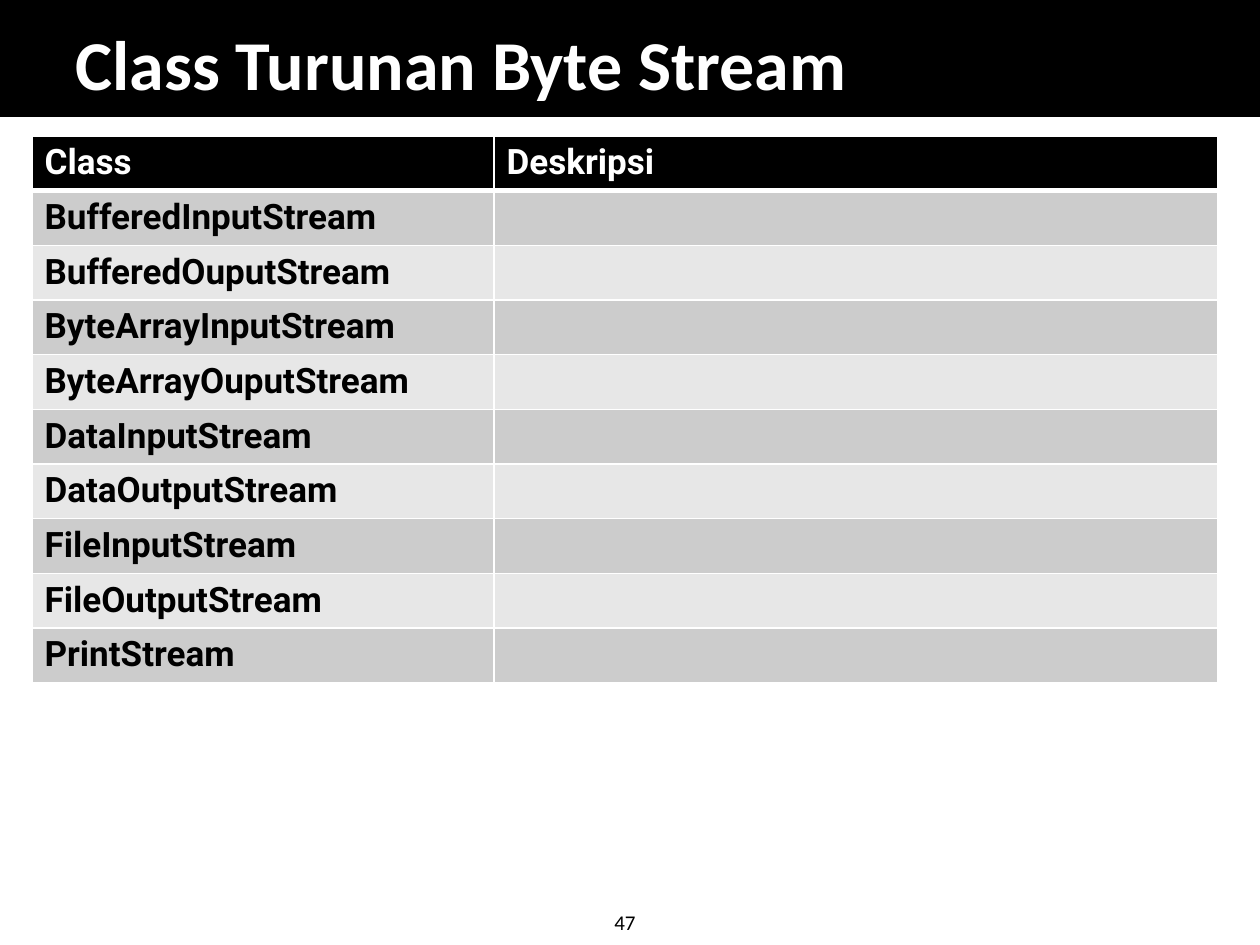
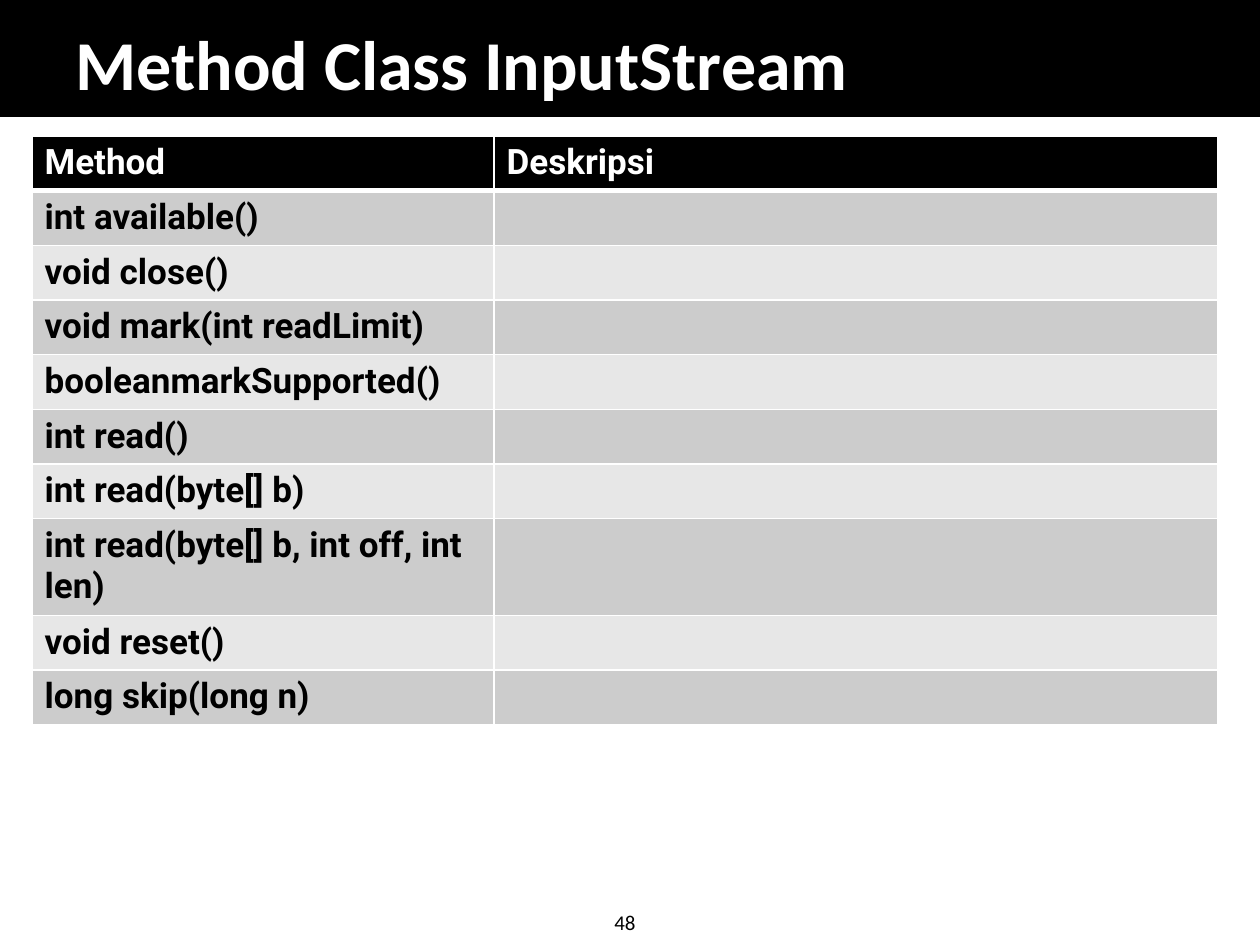
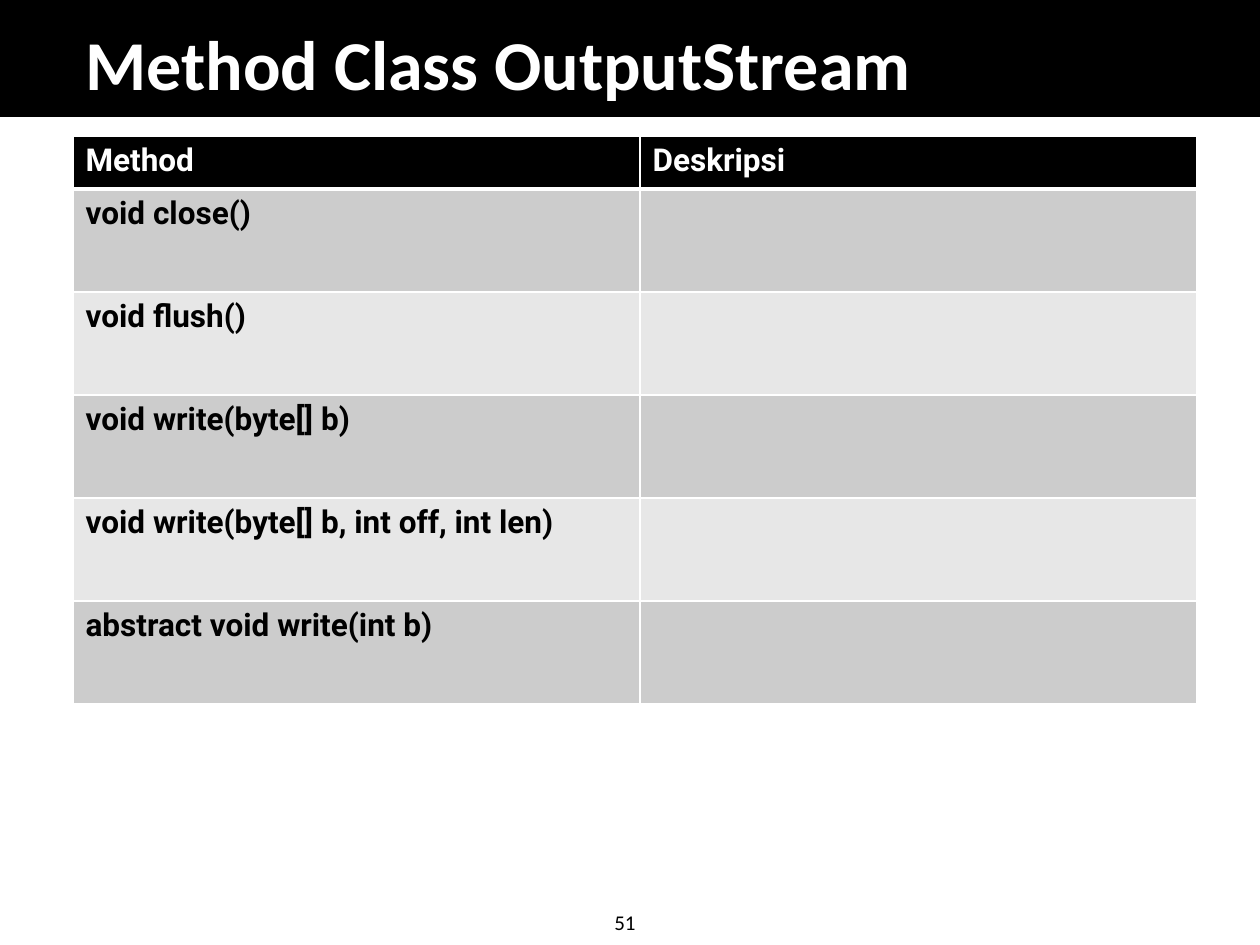
from lxml import etree
from pptx import Presentation
from pptx.dml.color import RGBColor
from pptx.enum.shapes import MSO_SHAPE
from pptx.enum.text import MSO_ANCHOR, MSO_AUTO_SIZE, PP_ALIGN
from pptx.oxml.ns import qn
from pptx.util import Emu, Pt

RECTANGLE = MSO_SHAPE.RECTANGLE
BOTTOM = MSO_ANCHOR.BOTTOM
NO_AUTOFIT = MSO_AUTO_SIZE.NONE
LEFT = PP_ALIGN.LEFT

BLACK = RGBColor(0x00, 0x00, 0x00)
WHITE = RGBColor(0xFF, 0xFF, 0xFF)
DARK_ROW = RGBColor(0xCC, 0xCC, 0xCC)
LIGHT_ROW = RGBColor(0xE7, 0xE7, 0xE7)

HEADING_FONT = "Calibri"
TABLE_FONT = "Roboto"
SLIDE_WIDTH, SLIDE_HEIGHT = 1260, 945
BAND_HEIGHT = 116
TABLE_TOP = 136
ROW_HEIGHT = 53
TITLE_ONLY = 5

BYTE_STREAM_CLASSES = [
    "BufferedInputStream", "BufferedOuputStream", "ByteArrayInputStream",
    "ByteArrayOuputStream", "DataInputStream", "DataOutputStream",
    "FileInputStream", "FileOutputStream", "PrintStream",
]
INPUT_METHODS = [
    "int available()", "void close()", "void mark(int readLimit)",
    "booleanmarkSupported()", "int read()", "int read(byte[] b)",
    "int read(byte[] b, int off, int len)", "void reset()",
    "long skip(long n)",
]
OUTPUT_METHODS = [
    "void close()", "void flush()", "void write(byte[] b)",
    "void write(byte[] b, int off, int len)", "abstract void write(int b)",
]


def px(length):
    return Emu(round(length * 914400 / 126))


def add_run(paragraph, text, font_name, size, color, bold=False):
    run = paragraph.add_run()
    run.text = text
    run.font.name = font_name
    run.font.size = Pt(size)
    run.font.color.rgb = color
    run.font.bold = bold


def add_band(slide):
    """Put the black band behind the title."""
    band = slide.shapes.add_shape(RECTANGLE, 0, 0, px(SLIDE_WIDTH), px(BAND_HEIGHT))
    band.shadow.inherit = False
    band.fill.solid()
    band.fill.fore_color.rgb = BLACK
    band.line.color.rgb = BLACK
    band.line.width = Pt(1)
    slide.shapes.title.element.addprevious(band.element)


def set_title(slide, text, left, width):
    title = slide.shapes.title
    title.left, title.top = px(left), px(10)
    title.width, title.height = px(width), px(95)
    frame = title.text_frame
    frame.auto_size = NO_AUTOFIT
    frame.word_wrap = True
    frame.vertical_anchor = BOTTOM
    frame.margin_top = frame.margin_bottom = 0
    paragraph = frame.paragraphs[0]
    paragraph.alignment = LEFT
    add_run(paragraph, text, HEADING_FONT, 40, WHITE, bold=True)


def add_page_number(slide, number):
    box = slide.shapes.add_textbox(px(602), px(903), px(52), px(38))
    box.text_frame.word_wrap = True
    add_run(box.text_frame.paragraphs[0], str(number), HEADING_FONT, 12, BLACK)


def set_borders(cell, top, bottom):
    """Draw white borders: 1 pt at the sides, given points above and below."""
    properties = cell._tc.get_or_add_tcPr()
    widths = {"a:lnL": 1, "a:lnR": 1, "a:lnT": top, "a:lnB": bottom}
    for position, (tag, width) in enumerate(widths.items()):
        line = etree.Element(qn(tag), w=str(Pt(width)))
        fill = etree.SubElement(line, qn("a:solidFill"))
        etree.SubElement(fill, qn("a:srgbClr"), val=str(WHITE))
        properties.insert(position, line)


def row_fill(row):
    if row == 0:
        return BLACK
    return DARK_ROW if row % 2 else LIGHT_ROW


def add_description_table(slide, heading, names, left, column_widths, size,
                          body_height=ROW_HEIGHT):
    """List the names in the first column beside an empty description column."""
    labels = [heading] + names
    heights = [ROW_HEIGHT] + [body_height] * len(names)
    table = slide.shapes.add_table(
        len(labels), 2, px(left), px(TABLE_TOP),
        px(sum(column_widths)), px(sum(heights))).table
    for column, width in zip(table.columns, column_widths):
        column.width = px(width)
    for row, (label, height) in enumerate(zip(labels, heights)):
        table.rows[row].height = px(height)
        texts = (label, "" if row else "Deskripsi")
        for cell, text in zip(table.rows[row].cells, texts):
            cell.fill.solid()
            cell.fill.fore_color.rgb = row_fill(row)
            set_borders(cell, top=3 if row == 1 else 1, bottom=1 if row else 3)
            if text:
                paragraph = cell.text_frame.paragraphs[0]
                paragraph.alignment = LEFT
                add_run(paragraph, text, TABLE_FONT, size,
                        BLACK if row else WHITE, bold=True)


def add_table_slide(prs, title, title_left, title_width, number):
    slide = prs.slides.add_slide(prs.slide_layouts[TITLE_ONLY])
    add_band(slide)
    set_title(slide, title, title_left, title_width)
    add_page_number(slide, number)
    return slide


def main():
    prs = Presentation()
    prs.slide_width, prs.slide_height = px(SLIDE_WIDTH), px(SLIDE_HEIGHT)

    classes = add_table_slide(prs, "Class Turunan Byte Stream", 63, 1197, 47)
    add_description_table(classes, "Class", BYTE_STREAM_CLASSES, 32, (462, 724), 20)

    inputs = add_table_slide(prs, "Method Class InputStream", 63, 1187, 48)
    add_description_table(inputs, "Method", INPUT_METHODS, 32, (462, 724), 20)

    outputs = add_table_slide(prs, "Method Class OutputStream", 73, 1187, 51)
    add_description_table(outputs, "Method", OUTPUT_METHODS, 73, (567, 557), 18,
                          body_height=103)

    prs.save("out.pptx")


if __name__ == "__main__":
    main()
